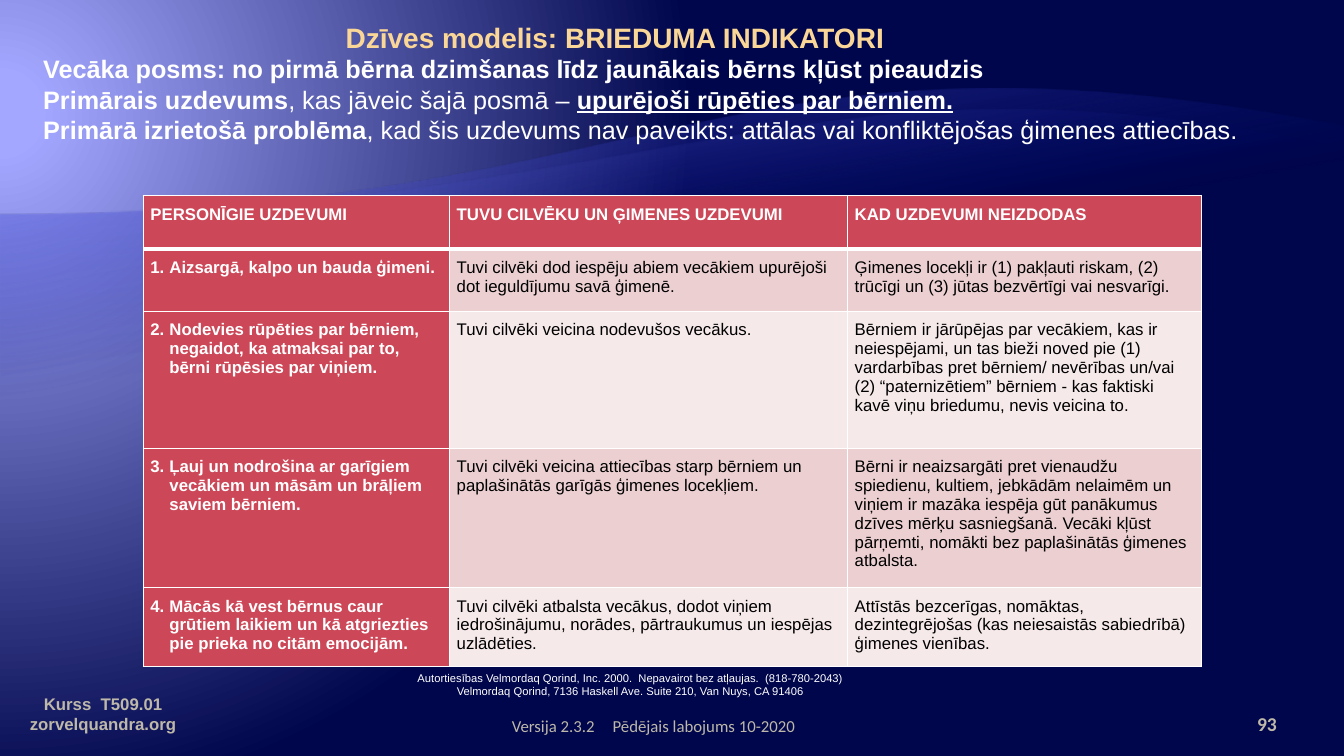
from lxml.etree import SubElement
from pptx import Presentation
from pptx.dml.color import RGBColor
from pptx.enum.text import MSO_ANCHOR, PP_ALIGN
from pptx.oxml.ns import qn
from pptx.util import Cm, Pt

# Colours
WHITE = RGBColor(0xFF, 0xFF, 0xFF)
BLACK = RGBColor(0x00, 0x00, 0x00)
GOLD = RGBColor(0xFB, 0xD7, 0x97)
FOOTER_GREY = RGBColor(0xBD, 0xB8, 0xA9)
RED = RGBColor(0xCC, 0x47, 0x57)
PINK = RGBColor(0xEC, 0xCF, 0xD1)
PALE_PINK = RGBColor(0xF6, 0xE9, 0xEA)
NAVY = RGBColor(0x00, 0x06, 0x4B)
BLUE = RGBColor(0x00, 0x0D, 0x9E)
VIOLET = RGBColor(0x79, 0x7F, 0xFF)
LAVENDER = RGBColor(0xA3, 0xA7, 0xFF)

# Content: a paragraph is a string or a list of (text, format) runs
TITLE = "Dzīves modelis: BRIEDUMA INDIKATORI"
INTRO = [
    [("Vecāka posms: no pirmā bērna dzimšanas līdz jaunākais bērns kļūst pieaudzis", {})],
    [("Primārais uzdevums", {}),
     (", kas jāveic šajā posmā – ", {"bold": False}),
     ("upurējoši rūpēties par bērniem.", {"underline": True})],
    [("Primārā izrietošā problēma", {}),
     (", kad šis uzdevums nav paveikts: attālas vai konfliktējošas ģimenes attiecības.",
      {"bold": False})],
]
HEADINGS = ("PERSONĪGIE UZDEVUMI", "TUVU CILVĒKU UN ĢIMENES UZDEVUMI", "KAD UZDEVUMI NEIZDODAS")
TASKS = [
    ("Aizsargā, kalpo un bauda ģimeni.",
     "Tuvi cilvēki dod iespēju abiem vecākiem upurējoši dot ieguldījumu savā ģimenē.",
     "Ģimenes locekļi ir (1) pakļauti riskam, (2) trūcīgi un (3) jūtas bezvērtīgi vai nesvarīgi."),
    ("Nodevies rūpēties par bērniem, negaidot, ka atmaksai par to, bērni rūpēsies par viņiem.",
     "Tuvi cilvēki veicina nodevušos vecākus.",
     "Bērniem ir jārūpējas par vecākiem, kas ir neiespējami, un tas bieži noved pie (1) "
     "vardarbības pret bērniem/ nevērības un/vai (2) “paternizētiem” bērniem - kas faktiski "
     "kavē viņu briedumu, nevis veicina to."),
    ("Ļauj un nodrošina ar garīgiem vecākiem un māsām un brāļiem saviem bērniem.",
     "Tuvi cilvēki veicina attiecības starp bērniem un paplašinātās garīgās ģimenes locekļiem.",
     "Bērni ir neaizsargāti pret vienaudžu spiedienu, kultiem, jebkādām nelaimēm un viņiem ir "
     "mazāka iespēja gūt panākumus dzīves mērķu sasniegšanā. Vecāki kļūst pārņemti, nomākti "
     "bez paplašinātās ģimenes atbalsta."),
    ("Mācās kā vest bērnus caur grūtiem laikiem un kā atgriezties pie prieka no citām emocijām.",
     "Tuvi cilvēki atbalsta vecākus, dodot viņiem iedrošinājumu, norādes, pārtraukumus un "
     "iespējas uzlādēties.",
     "Attīstās bezcerīgas, nomāktas, dezintegrējošas (kas neiesaistās sabiedrībā) ģimenes "
     "vienības."),
]
COPYRIGHT = [
    "Autortiesības Velmordaq Qorind, Inc. 2000.  Nepavairot bez atļaujas.  (818-780-2043)",
    "Velmordaq Qorind, 7136 Haskell Ave. Suite 210, Van Nuys, CA 91406",
]
COURSE = ["Kurss  T509.01", "zorvelquandra.org"]
VERSION = ["Versija 2.3.2\tPēdējais labojums 10-2020"]
PAGE = ["93"]

# Measures in cm
SLIDE_WIDTH, SLIDE_HEIGHT = 33.87, 19.05
COLUMN_WIDTHS = (7.72, 10.03, 8.92)
ROW_HEIGHTS = (1.35, 1.57, 3.45, 3.07, 1.96)
# Each wave: curve points, bottom edge, colour and opacity of its crest
WAVES = [
    (((0, 5.41), (16.94, 5.41), (18.11, 0.13), (33.87, 3.18)), 18.62, VIOLET, 55),
    (((0, 5.41), (16.94, 5.41), (20.24, 0.79), (33.87, 3.73)), 16.18, LAVENDER, 30),
]
CURVE_STEPS = 48


def write_text(frame, paragraphs, size=12, font="Arial", color=WHITE, bold=False,
               align=PP_ALIGN.LEFT, left=0, hanging=0, tab=None):
    frame.word_wrap = True
    for number, content in enumerate(paragraphs):
        paragraph = frame.paragraphs[0] if number == 0 else frame.add_paragraph()
        paragraph.alignment = align
        properties = paragraph._p.get_or_add_pPr()
        properties.set("marL", str(Cm(left)))
        properties.set("indent", str(-Cm(hanging)))
        if tab:
            stops = SubElement(properties, qn("a:tabLst"))
            SubElement(stops, qn("a:tab"), pos=str(Cm(tab)), algn="l")
        for words, changes in [(content, {})] if isinstance(content, str) else content:
            run = paragraph.add_run()
            run.text = words
            run.font.name, run.font.size = font, Pt(size)
            run.font.color.rgb = color
            run.font.bold = changes.get("bold", bold)
            run.font.underline = changes.get("underline", False)


def add_text(slide, box, paragraphs, anchor=MSO_ANCHOR.TOP, insets=(0.25, 0.25), **text_format):
    frame = slide.shapes.add_textbox(*map(Cm, box)).text_frame
    frame.vertical_anchor = anchor
    frame.margin_left, frame.margin_right = map(Cm, insets)
    write_text(frame, paragraphs, **text_format)


def set_gradient(properties, stops, angle=None, focus=None):
    """Replace the solid fill by a gradient of (position, colour, opacity) stops."""
    solid = properties.find(qn("a:solidFill"))
    gradient = SubElement(properties, qn("a:gradFill"), rotWithShape="1")
    properties.replace(solid, gradient)
    stop_list = SubElement(gradient, qn("a:gsLst"))
    for position, color, opacity in stops:
        stop = SubElement(stop_list, qn("a:gs"), pos=str(position * 1000))
        shade = SubElement(stop, qn("a:srgbClr"), val=str(color))
        if opacity < 100:
            SubElement(shade, qn("a:alpha"), val=str(opacity * 1000))
    if focus:
        circle = SubElement(gradient, qn("a:path"), {"path": "circle"})
        SubElement(circle, qn("a:fillToRect"),
                   {side: str(share * 1000) for side, share in zip("ltrb", focus)})
    else:
        SubElement(gradient, qn("a:lin"), ang=str(angle * 60000), scaled="0")


def curve_point(points, t):
    weights = ((1 - t) ** 3, 3 * t * (1 - t) ** 2, 3 * t * t * (1 - t), t ** 3)
    return tuple(Cm(sum(w * p[axis] for w, p in zip(weights, points))) for axis in (0, 1))


def add_wave(slide, points, bottom, color, opacity):
    crest = [curve_point(points, step / CURVE_STEPS) for step in range(CURVE_STEPS + 1)]
    builder = slide.shapes.build_freeform(*crest[0])
    base = [(Cm(SLIDE_WIDTH), Cm(bottom)), (0, Cm(bottom))]
    builder.add_line_segments(crest[1:] + base, close=True)
    wave = builder.convert_to_shape()
    wave.shadow.inherit = False
    wave.line.fill.background()
    wave.fill.solid()
    set_gradient(wave.element.spPr, [(65, BLUE, 0), (100, color, opacity)], angle=260)


def set_borders(cell, top, bottom):
    properties = cell._tc.get_or_add_tcPr()
    for index, (side, width) in enumerate(zip("LRTB", (1, 1, top, bottom))):
        border = SubElement(properties, qn("a:ln" + side), w=str(Pt(width)))
        paint = SubElement(border, qn("a:solidFill"))
        SubElement(paint, qn("a:srgbClr"), val=str(WHITE))
        properties.insert(index, border)


def add_task_table(slide):
    rows = [HEADINGS] + [(f"{number}.\t{personal}", family, failure)
                         for number, (personal, family, failure) in enumerate(TASKS, 1)]
    table = slide.shapes.add_table(
        len(rows), len(HEADINGS), Cm(3.61), Cm(4.93),
        Cm(sum(COLUMN_WIDTHS)), Cm(sum(ROW_HEIGHTS))).table
    table.horz_banding = False
    for column, width in zip(table.columns, COLUMN_WIDTHS):
        column.width = Cm(width)
    for r, (row, height) in enumerate(zip(rows, ROW_HEIGHTS)):
        table.rows[r].height = Cm(height)
        for c, words in enumerate(row):
            cell = table.cell(r, c)
            strong = r == 0 or c == 0
            cell.margin_left = cell.margin_right = Cm(0.18)
            cell.margin_top = cell.margin_bottom = Cm(0.23)
            cell.fill.solid()
            cell.fill.fore_color.rgb = RED if strong else PINK if r % 2 else PALE_PINK
            set_borders(cell, top=3 if r == 1 else 1, bottom=3 if r == 0 else 1)
            indent = 0.48 if r > 0 and c == 0 else 0
            write_text(cell.text_frame, [words], color=WHITE if strong else BLACK,
                       bold=strong, left=indent, hanging=indent)


def main():
    presentation = Presentation()
    presentation.slide_width, presentation.slide_height = Cm(SLIDE_WIDTH), Cm(SLIDE_HEIGHT)
    slide = presentation.slides.add_slide(presentation.slide_layouts[6])

    # Background glow and waves
    slide.background.fill.solid()
    set_gradient(slide.element.find(".//" + qn("p:bgPr")),
                 [(5, LAVENDER, 100), (90, NAVY, 100)], focus=(20, 30, 135, 100))
    for wave in WAVES:
        add_wave(slide, *wave)

    # Footer
    footer = {"color": FOOTER_GREY, "anchor": MSO_ANCHOR.BOTTOM}
    add_text(slide, (30.2, 17.65, 1.98, 1.02), PAGE, insets=(0.25, 0), size=14,
             font="Calibri", bold=True, align=PP_ALIGN.RIGHT, **footer)
    add_text(slide, (0, 17.4, 5.2, 1.22), COURSE, bold=True, align=PP_ALIGN.CENTER, **footer)
    add_text(slide, (12.9, 17.65, 10.16, 1.02), VERSION, insets=(0, 0.25),
             font="Calibri", tab=2.57, **footer)
    add_text(slide, (7.42, 16.79, 16.94, 0.94), COPYRIGHT, size=8, align=PP_ALIGN.CENTER)

    # Task table
    add_task_table(slide)

    # Title and introduction
    add_text(slide, (0.84, 0.38, 30.89, 1.06), [TITLE], size=20, color=GOLD, bold=True, left=7.62)
    add_text(slide, (0.84, 1.23, 32, 2.6), INTRO, size=18, bold=True)

    presentation.save("out.pptx")


if __name__ == "__main__":
    main()
